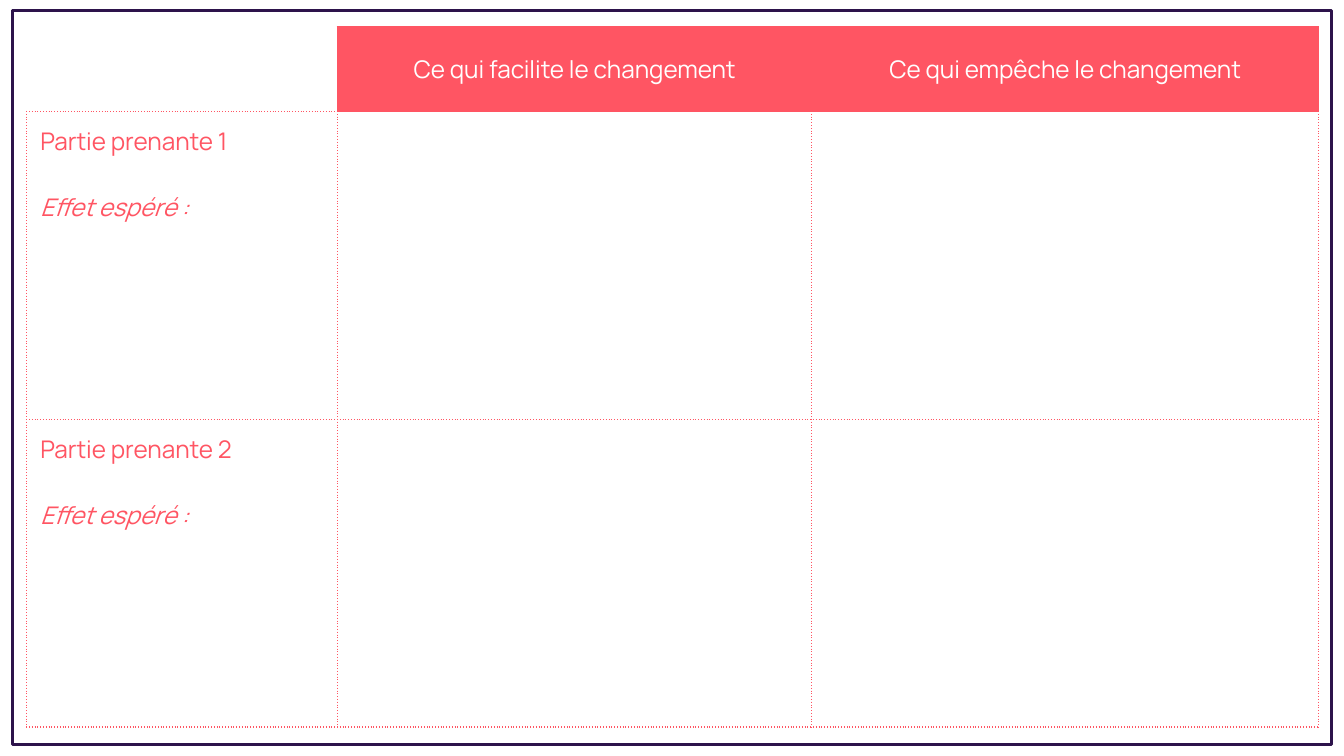
from dataclasses import dataclass

from lxml.etree import SubElement
from pptx import Presentation
from pptx.dml.color import RGBColor
from pptx.enum.shapes import MSO_SHAPE
from pptx.enum.text import MSO_ANCHOR, PP_ALIGN
from pptx.oxml.ns import qn
from pptx.table import Table, _Cell
from pptx.util import Inches, Pt

COLORS = {"coral": "FF5563", "navy": "2D134B", "white": "FFFFFF"}
FONT = {"name": "Manrope", "size": Pt(13)}
LINE_GAP = Pt(17.75)
COL_WIDTHS = (2.31, 3.53, 3.77)
ROW_HEIGHTS = (0.63, 2.29, 2.29)
HEADERS = ("Ce qui facilite le changement", "Ce qui empêche le changement")
STAKEHOLDERS = ("Partie prenante 1", "Partie prenante 2")


@dataclass(frozen=True)
class Border:
    color: str = "coral"
    dash: str = "dot"


DOTTED = Border()
SOLID = Border(dash="solid")
HIDDEN = Border(color="white")


def rgb(name: str) -> RGBColor:
    return RGBColor.from_string(COLORS[name])


def set_borders(cell: _Cell, left: Border, right: Border, top: Border, bottom: Border) -> None:
    """Add the side lines; call before filling, as lines precede the fill in the XML."""
    tc_pr = cell._tc.get_or_add_tcPr()
    for side, border in zip("LRTB", (left, right, top, bottom)):
        ln = SubElement(tc_pr, qn(f"a:ln{side}"), w=str(Pt(0.75)))
        fill = SubElement(ln, qn("a:solidFill"))
        SubElement(fill, qn("a:srgbClr"), val=COLORS[border.color])
        SubElement(ln, qn("a:prstDash"), val=border.dash)


def fill_cell(cell: _Cell, color: str) -> None:
    cell.fill.solid()
    cell.fill.fore_color.rgb = rgb(color)


def write_lines(cell: _Cell, lines: tuple[str, ...], color: str, align: PP_ALIGN) -> None:
    """Write one paragraph per line; lines after the first are italic and set apart."""
    tf = cell.text_frame
    for i, line in enumerate(lines):
        p = tf.add_paragraph() if i else tf.paragraphs[0]
        p.alignment = align
        if i:
            p.space_before = LINE_GAP
        r = p.add_run()
        r.text = line
        for attr, value in {**FONT, "italic": i > 0}.items():
            setattr(r.font, attr, value)
        r.font.color.rgb = rgb(color)


def style_cells(table: Table) -> None:
    for row in range(len(ROW_HEIGHTS)):
        for col in range(len(COL_WIDTHS)):
            cell = table.cell(row, col)
            for side in ("left", "right", "top", "bottom"):
                setattr(cell, f"margin_{side}", Inches(0.1))
            if row == 0 and col == 0:
                set_borders(cell, HIDDEN, SOLID, HIDDEN, DOTTED)
                fill_cell(cell, "white")
            elif row == 0:
                set_borders(cell, SOLID, SOLID, SOLID, SOLID)
                fill_cell(cell, "coral")
                cell.vertical_anchor = MSO_ANCHOR.MIDDLE
            else:
                top = SOLID if row == 1 and col else DOTTED
                set_borders(cell, DOTTED, DOTTED, top, DOTTED)
                cell.fill.background()


def main() -> None:
    prs = Presentation()
    prs.slide_width = Inches(10)
    prs.slide_height = prs.slide_width * 9 // 16
    s = prs.slides.add_slide(prs.slide_layouts[6])

    frame = s.shapes.add_shape(
        MSO_SHAPE.RECTANGLE, Inches(0.09), Inches(0.08), Inches(9.82), Inches(5.46)
    )
    frame.shadow.inherit = False
    frame.fill.background()
    frame.line.color.rgb = rgb("navy")
    frame.line.width = Pt(1.5)

    table = s.shapes.add_table(
        len(ROW_HEIGHTS), len(COL_WIDTHS), Inches(0.2), Inches(0.2),
        Inches(sum(COL_WIDTHS)), Inches(sum(ROW_HEIGHTS)),
    ).table
    table.first_row = table.horz_banding = False
    for column, width in zip(table.columns, COL_WIDTHS):
        column.width = Inches(width)
    for row, height in zip(table.rows, ROW_HEIGHTS):
        row.height = Inches(height)

    style_cells(table)
    for col, header in enumerate(HEADERS, 1):
        write_lines(table.cell(0, col), (header,), "white", PP_ALIGN.CENTER)
    for row, name in enumerate(STAKEHOLDERS, 1):
        write_lines(table.cell(row, 0), (name, "Effet espéré :"), "coral", PP_ALIGN.LEFT)

    prs.save("out.pptx")


if __name__ == "__main__":
    main()
